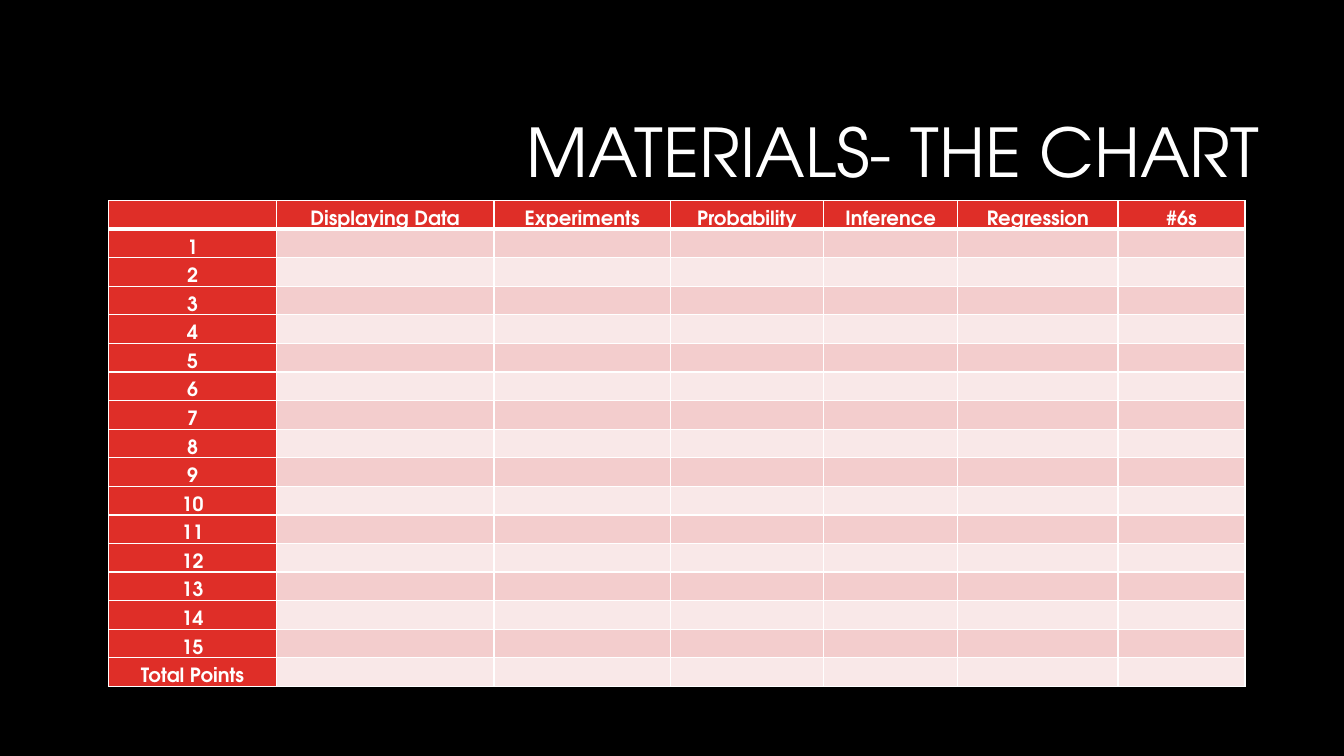
"""Build the slide showing the blank points chart for the class."""
import lxml.etree
import pptx
import pptx.dml.color
import pptx.enum.text
import pptx.oxml.ns
import pptx.util

Inches = pptx.util.Inches
RGBColor = pptx.dml.color.RGBColor
ALIGN = pptx.enum.text.PP_ALIGN
ANCHOR = pptx.enum.text.MSO_ANCHOR
qn = pptx.oxml.ns.qn

BLACK = RGBColor(0x00, 0x00, 0x00)
WHITE = RGBColor(0xFF, 0xFF, 0xFF)
RED = RGBColor(0xDF, 0x2E, 0x28)
PINK = RGBColor(0xF3, 0xCD, 0xCD)
PALE_PINK = RGBColor(0xF9, 0xE8, 0xE8)

TOPICS = ["", "Displaying Data", "Experiments", "Probability",
          "Inference", "Regression", "#6s"]
ROW_LABELS = [str(number) for number in range(1, 16)] + ["Total Points"]
COLUMN_WIDTHS = [1.66, 2.16, 1.75, 1.52, 1.33, 1.59, 1.26]


def write_text(frame, text, *, font, size, align, spacing, bold=False):
    """Put one formatted paragraph into a text frame."""
    paragraph = frame.paragraphs[0]
    paragraph.alignment = align
    paragraph.line_spacing = spacing
    if not text:
        end = lxml.etree.SubElement(paragraph._p, qn("a:endParaRPr"))
        end.set("sz", str(size * 100))
        return
    run = paragraph.add_run()
    run.text = text
    run.font.name = font
    run.font.size = pptx.util.Pt(size)
    run.font.bold = bold
    run.font.color.rgb = WHITE


class ChartSlide:
    """Hold the slide and its style, and draw its elements."""

    def __init__(self, slide, font):
        """Keep the slide and font, and paint the background."""
        self.slide = slide
        self.font = font
        background = slide.background.fill
        background.solid()
        background.fore_color.rgb = BLACK

    def title(self, text, left, top, width, height):
        """Add the right-aligned heading."""
        frame = self.slide.shapes.add_textbox(
            Inches(left), Inches(top), Inches(width), Inches(height)).text_frame
        frame.word_wrap = True
        frame.vertical_anchor = ANCHOR.MIDDLE
        write_text(frame, text, font=self.font, size=48,
                   align=ALIGN.RIGHT, spacing=0.9)

    def border(self, cell, side, points):
        """Draw one white cell border."""
        line = lxml.etree.SubElement(cell._tc.get_or_add_tcPr(), qn(f"a:ln{side}"))
        line.set("w", str(pptx.util.Pt(points)))
        fill = lxml.etree.SubElement(line, qn("a:solidFill"))
        lxml.etree.SubElement(fill, qn("a:srgbClr")).set("val", str(WHITE))

    def cell(self, cell, text, color, top_line, bottom_line):
        """Fill, frame and label one table cell."""
        cell.margin_left = cell.margin_right = Inches(0.07)
        cell.margin_top = cell.margin_bottom = 0
        cell.vertical_anchor = ANCHOR.BOTTOM
        for side, points in zip("LRTB", (1, 1, top_line, bottom_line)):
            self.border(cell, side, points)
        cell.fill.solid()
        cell.fill.fore_color.rgb = color
        write_text(cell.text_frame, text, font=self.font, size=14,
                   align=ALIGN.CENTER, spacing=1.15, bold=True)

    def points_table(self, topics, labels, widths, left, top, height):
        """Add the table with topics across and numbered rows down."""
        blanks = [""] * (len(topics) - 1)
        rows = [topics] + [[label] + blanks for label in labels]
        table = self.slide.shapes.add_table(
            len(rows), len(topics), Inches(left), Inches(top),
            Inches(sum(widths)), Inches(height)).table
        for column, width in zip(table.columns, widths):
            column.width = Inches(width)
        for r, texts in enumerate(rows):
            table.rows[r].height = Inches(height / len(rows))
            band = PINK if r % 2 else PALE_PINK
            for c, text in enumerate(texts):
                self.cell(table.cell(r, c), text,
                          RED if r == 0 or c == 0 else band,
                          top_line=3 if r == 1 else 1,
                          bottom_line=3 if r == 0 else 1)


def main():
    """Create and save the presentation."""
    deck = pptx.Presentation()
    deck.slide_width = Inches(13.33)
    deck.slide_height = Inches(7.5)
    chart = ChartSlide(deck.slides.add_slide(deck.slide_layouts[6]),
                       "TeX Gyre Adventor")
    chart.title("MATERIALS- THE CHART", 3.17, 0.84, 9.42, 1.41)
    chart.points_table(TOPICS, ROW_LABELS, COLUMN_WIDTHS, 1.08, 1.99, 4.82)
    deck.save("out.pptx")


if __name__ == "__main__":
    main()
